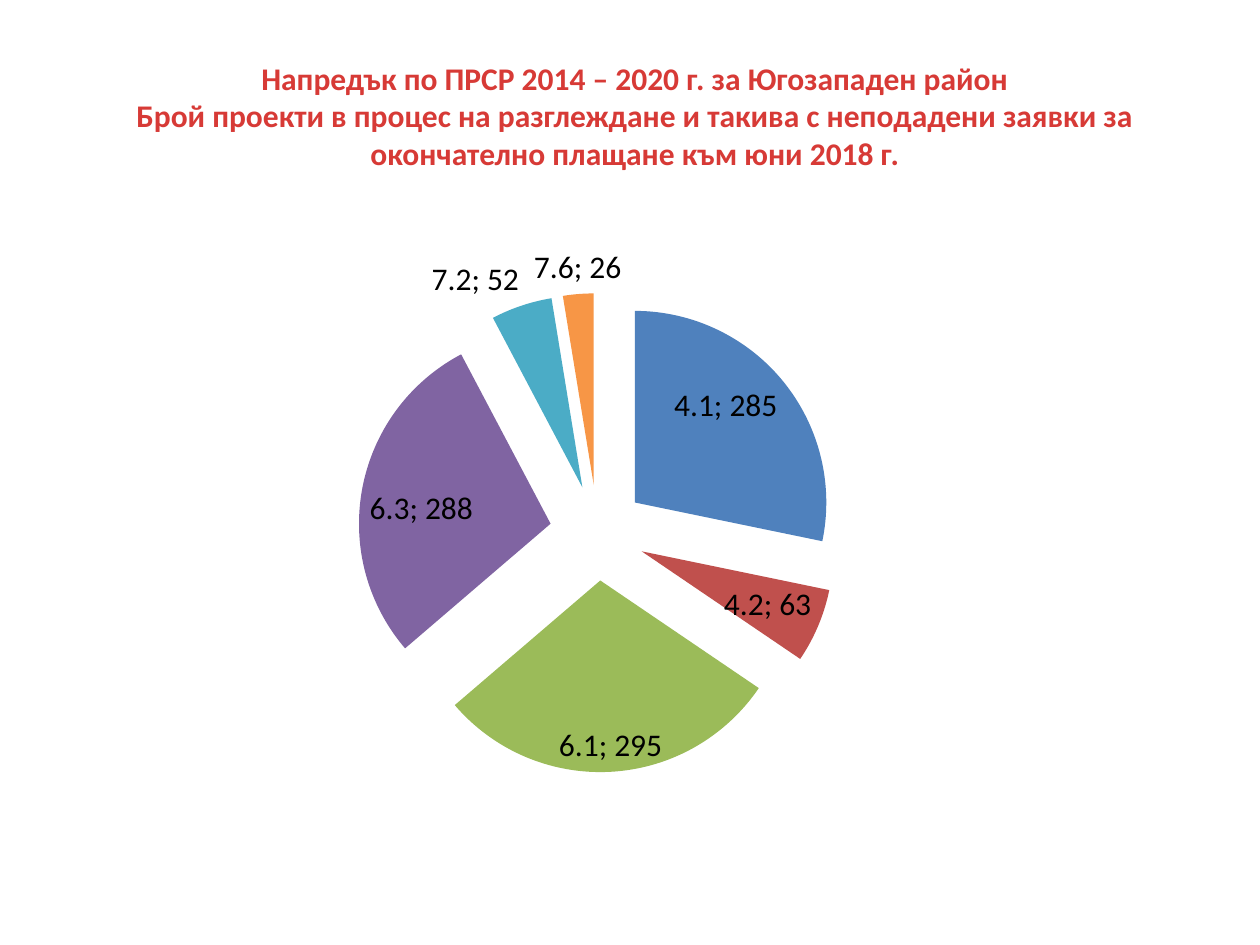
from lxml import etree
from pptx import Presentation
from pptx.chart.data import CategoryChartData
from pptx.dml.color import RGBColor
from pptx.enum.chart import XL_CHART_TYPE, XL_LABEL_POSITION
from pptx.enum.text import MSO_ANCHOR, PP_ALIGN
from pptx.oxml import parse_xml
from pptx.oxml.ns import nsdecls, qn
from pptx.util import Cm, Pt

PIE = XL_CHART_TYPE.PIE
INSIDE = XL_LABEL_POSITION.INSIDE_END
OUTSIDE = XL_LABEL_POSITION.OUTSIDE_END
MIDDLE = MSO_ANCHOR.MIDDLE
CENTER = PP_ALIGN.CENTER

RED = RGBColor(0xD7, 0x3A, 0x36)
BLACK = RGBColor(0x00, 0x00, 0x00)
FONT = "Calibri"

# Measure, number of projects, slice colour, label position
SLICES = [
    ("4.1", 285, RGBColor(0x4F, 0x81, 0xBD), INSIDE),
    ("4.2", 63, RGBColor(0xC0, 0x50, 0x4D), INSIDE),
    ("6.1", 295, RGBColor(0x9B, 0xBB, 0x59), INSIDE),
    ("6.3", 288, RGBColor(0x80, 0x64, 0xA2), INSIDE),
    ("7.2", 52, RGBColor(0x4B, 0xAC, 0xC6), OUTSIDE),
    ("7.6", 26, RGBColor(0xF7, 0x96, 0x46), OUTSIDE),
]

deck = Presentation()
deck.slide_width, deck.slide_height = Cm(25.4), Cm(19.05)
page = deck.slides.add_slide(deck.slide_layouts[5])

# Title
title = page.shapes.title
title.left, title.top, title.width, title.height = Cm(1.37), Cm(1.04), Cm(22.86), Cm(2.57)
frame = title.text_frame
frame.word_wrap = True
frame.vertical_anchor = MIDDLE
frame.text = (
    "Напредък по ПРСР 2014 – 2020 г. за Югозападен район\v"
    "Брой проекти в процес на разглеждане и такива с неподадени заявки за "
    "окончателно плащане към юни 2018 г."
)
para = frame.paragraphs[0]
para.alignment = CENTER
for span in para.runs:
    span.font.name = FONT
    span.font.size = Pt(18)
    span.font.bold = True
    span.font.color.rgb = RED

# Pie chart
chart_data = CategoryChartData()
chart_data.categories = [measure for measure, *_ in SLICES]
chart_data.add_series("Series 1", [count for _, count, *_ in SLICES])
chart = page.shapes.add_chart(
    PIE, Cm(4.34), Cm(4.65), Cm(16.94), Cm(11.28), chart_data
).chart
chart.has_legend = False
chart.has_title = False
chart.font.name = FONT
chart.font.size = Pt(18)
chart.font.color.rgb = BLACK

# Slices with their labels
series = chart.plots[0].series[0]
for index, (_, _, colour, position) in enumerate(SLICES):
    point = series.points[index]
    point.format.fill.solid()
    point.format.fill.fore_color.rgb = colour
    label = point.data_label
    label.font.size = Pt(18)
    label.font.name = FONT
    label.font.color.rgb = BLACK
    label.position = position

# Category and value in each label
for label_xml in series._element.iter(qn("c:dLbl")):
    label_xml.find(qn("c:showCatName")).set("val", "1")
    etree.SubElement(label_xml, qn("c:separator")).text = "; "

# Pull the slices apart
series._element.find(qn("c:dPt")).addprevious(
    parse_xml(f'<c:explosion {nsdecls("c")} val="25"/>')
)

# Place the pie within the chart
plot_area = chart._chartSpace.chart.plotArea
for old_layout in plot_area.findall(qn("c:layout")):
    plot_area.remove(old_layout)
plot_area.insert(0, parse_xml(
    f'<c:layout {nsdecls("c")}><c:manualLayout><c:layoutTarget val="inner"/>'
    '<c:xMode val="edge"/><c:yMode val="edge"/><c:x val="0.17"/><c:y val="0.11"/>'
    '<c:w val="0.57"/><c:h val="0.86"/></c:manualLayout></c:layout>'
))

deck.save("out.pptx")
